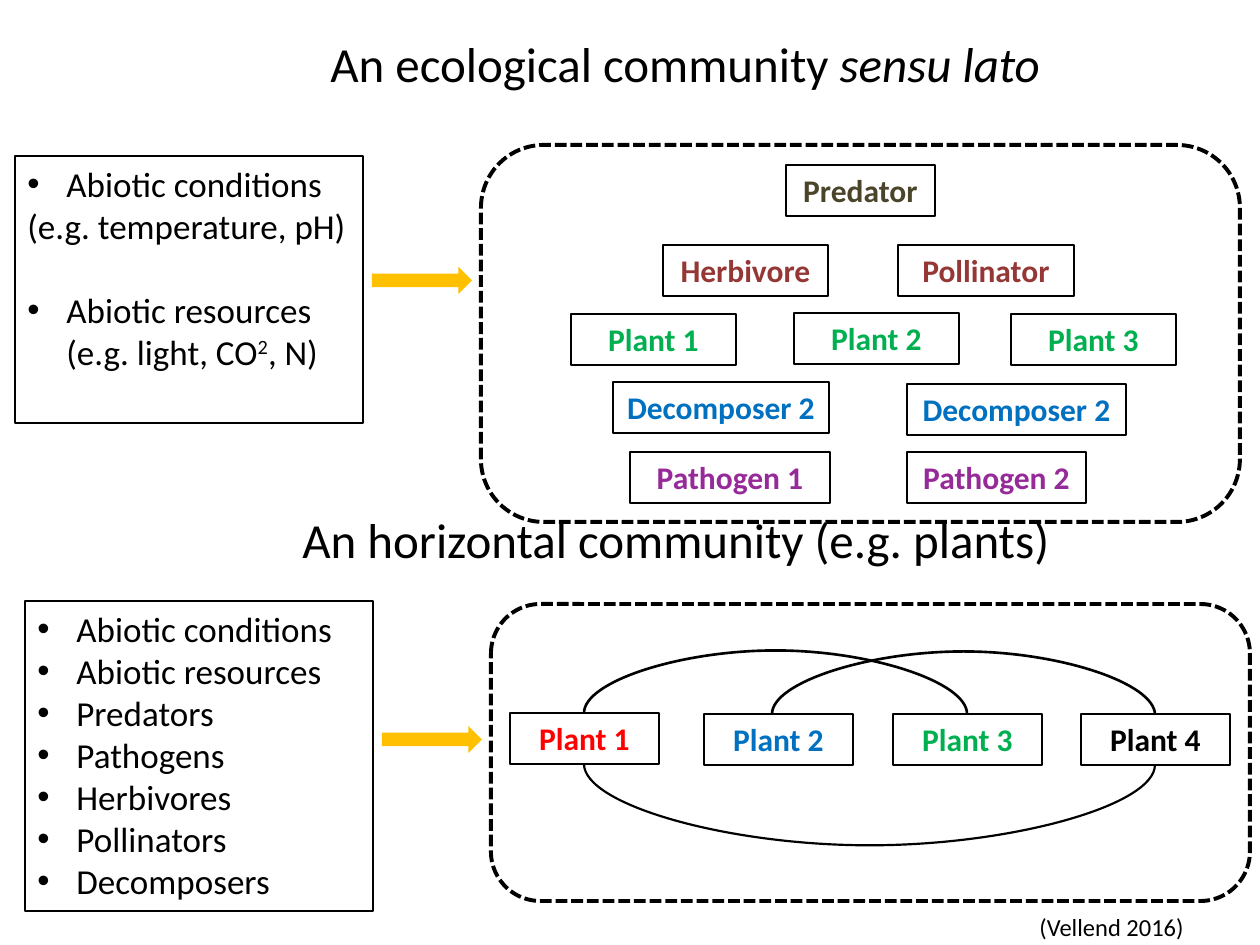
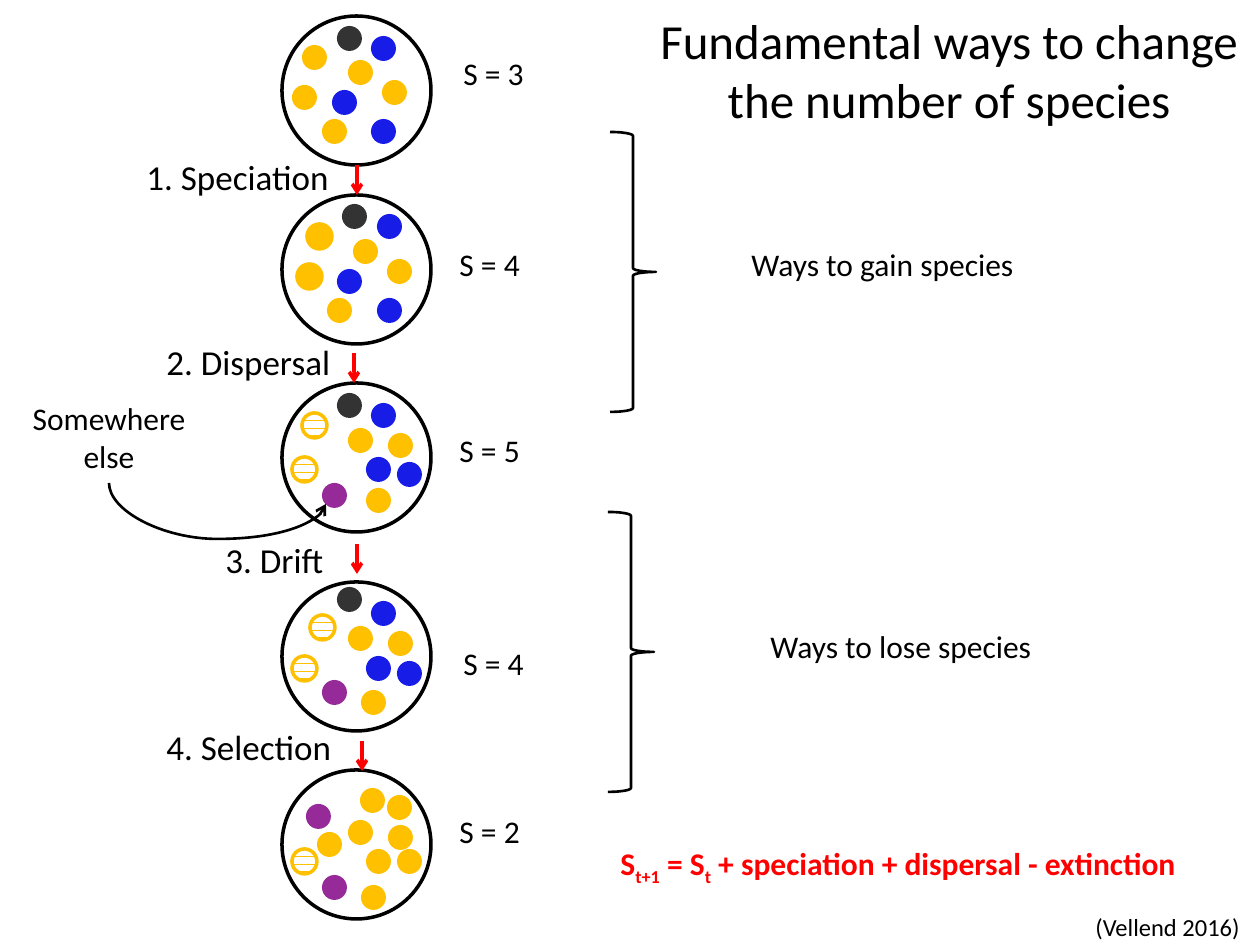
from lxml import etree
from pptx import Presentation
from pptx import util as u
from pptx.dml.color import RGBColor
from pptx.enum import dml, shapes, text
from pptx.oxml.ns import qn

PX = 7257  # EMU in one px, 126 px to the inch
FONT = "Calibri"
TITLE, BODY, LABEL, SOURCE = 28, 20, 18, 14
BLACK = RGBColor(0x00, 0x00, 0x00)
WHITE = RGBColor(0xFF, 0xFF, 0xFF)
DARK = RGBColor(0x33, 0x33, 0x33)
OLIVE = RGBColor(0x4A, 0x45, 0x2A)
BROWN = RGBColor(0x95, 0x37, 0x35)
GREEN = RGBColor(0x00, 0xB0, 0x50)
SKY = RGBColor(0x00, 0x70, 0xC0)
BLUE = RGBColor(0x17, 0x1C, 0xE7)
PURPLE = RGBColor(0x96, 0x2A, 0x99)
RED = RGBColor(0xFF, 0x00, 0x00)
AMBER = RGBColor(0xFF, 0xC0, 0x00)
SHAPE = shapes.MSO_SHAPE
CENTER = text.PP_ALIGN.CENTER


def draw(page, kind, box, fill=None, line=None, weight=0.75):
    """Add a preset shape; box is left, top, width, height in px."""
    shape = page.shapes.add_shape(kind, *[PX * side for side in box])
    shape.shadow.inherit = False
    if fill is None:
        shape.fill.background()
    else:
        shape.fill.solid()
        shape.fill.fore_color.rgb = fill
    if line is None:
        shape.line.fill.background()
    else:
        shape.line.color.rgb = line
        shape.line.width = u.Pt(weight)
    return shape


def write(shape, lines, size, color=BLACK, bold=False, align=text.PP_ALIGN.LEFT, accent=()):
    """Fill a shape with paragraphs; every second part between bars gets the accent.

    A line that starts with a bullet sign becomes a bulleted paragraph.
    """
    frame = shape.text_frame
    frame.word_wrap = True
    frame.vertical_anchor = text.MSO_ANCHOR.TOP
    for number, line in enumerate(lines):
        para = frame.paragraphs[0] if number == 0 else frame.add_paragraph()
        para.alignment = align
        if line.startswith("•"):
            props = para._p.get_or_add_pPr()
            props.set("marL", str(39 * PX))
            props.set("indent", str(-39 * PX))
            etree.SubElement(props, qn("a:buFont")).set("typeface", "Arial")
            etree.SubElement(props, qn("a:buChar")).set("char", "•")
        for order, part in enumerate(line.lstrip("•").split("|")):
            span = para.add_run()
            span.text = part
            span.font.name = FONT
            span.font.size = u.Pt(size)
            span.font.bold = bold
            span.font.color.rgb = color
            if order % 2:
                span._r.get_or_add_rPr().set(*accent)
    return shape


deck = Presentation()
deck.slide_width, deck.slide_height = u.Inches(10), u.Inches(7.5)
blank = deck.slide_layouts[6]
community = deck.slides.add_slide(blank)
change = deck.slides.add_slide(blank)

# Slide 1: factors on the left act on the community on the right
for frame_box, arrow_box, factor_box in [
    ((481, 145, 759, 377), (372, 267, 100, 27), (15, 156, 348, 267)),
    ((491, 604, 759, 297), (382, 726, 100, 27), (25, 601, 348, 310)),
]:
    border = draw(community, SHAPE.ROUNDED_RECTANGLE, frame_box, line=BLACK, weight=2.25)
    border.line.dash_style = dml.MSO_LINE.SQUARE_DOT
    draw(community, SHAPE.RIGHT_ARROW, arrow_box, fill=AMBER)
    factors = draw(community, SHAPE.RECTANGLE, factor_box, line=BLACK)
    if frame_box[1] < 500:
        write(factors, ["•Abiotic conditions", "(e.g. temperature, pH)",
                        "•Abiotic resources (e.g. light, CO|2|, N)"],
              BODY, accent=("baseline", "30000"))
        factors.text_frame.paragraphs[2].space_before = u.Pt(24)
    else:
        write(factors, ["•Abiotic conditions", "•Abiotic resources", "•Predators", "•Pathogens",
                        "•Herbivores", "•Pollinators", "•Decomposers"], BODY)

for name, color, left, top, width in [
    ("Predator", OLIVE, 786, 165, 149),
    ("Herbivore", BROWN, 663, 245, 165),
    ("Pollinator", BROWN, 898, 245, 176),
    ("Plant 1", GREEN, 571, 314, 165),
    ("Plant 2", GREEN, 794, 313, 165),
    ("Plant 3", GREEN, 1011, 314, 165),
    ("Decomposer 2", SKY, 613, 382, 216),
    ("Decomposer 2", SKY, 907, 384, 219),
    ("Pathogen 1", PURPLE, 630, 452, 200),
    ("Pathogen 2", PURPLE, 907, 452, 179),
]:
    group = draw(community, SHAPE.RECTANGLE, (left, top, width, 51), line=BLACK)
    write(group, [name], LABEL, color, True, CENTER)

plants = []
for number, (color, left, top) in enumerate(
        [(RED, 510, 713), (SKY, 704, 714), (GREEN, 893, 714), (BLACK, 1081, 714)], 1):
    plant = draw(community, SHAPE.RECTANGLE, (left, top, 149, 51), line=BLACK)
    plants.append(write(plant, [f"Plant {number}"], LABEL, color, True, CENTER))

# Slide 2: a chain of communities, each a ring holding coloured individuals
HATCHED = "hatched"
OUTLINED = "outlined"
rings = [
    (16, {DARK: [(55, 10)], BLUE: [(89, 20), (50, 74), (89, 103)],
          AMBER: [(20, 29), (66, 44), (10, 69), (100, 64), (40, 103)]}),
    (195, {DARK: [(60, 9)], BLUE: [(95, 19), (55, 74), (95, 103)],
           AMBER: [(71, 44), (105, 64), (45, 103)], OUTLINED: [(25, 29), (15, 69)]}),
    (383, {DARK: [(55, 10)], BLUE: [(89, 20), (84, 74), (115, 79)],
           AMBER: [(66, 45), (106, 50), (84, 105)], HATCHED: [(20, 30), (10, 74)],
           PURPLE: [(40, 100)]}),
    (582, {DARK: [(55, 5)], BLUE: [(89, 19), (84, 74), (115, 79)],
           AMBER: [(66, 44), (106, 49), (79, 108)], HATCHED: [(28, 33), (10, 74)],
           PURPLE: [(40, 98)]}),
    (770, {AMBER: [(66, 50), (106, 55), (79, 115), (84, 79), (115, 79), (78, 18), (105, 25),
                   (35, 62)], HATCHED: [(10, 79)], PURPLE: [(40, 105), (24, 34)]}),
]
RING_LEFT = 282
for ring_top, species in rings:
    draw(change, SHAPE.OVAL, (RING_LEFT, ring_top, 149, 149), line=BLACK, weight=2)
    for look, places in species.items():
        edged = look in (HATCHED, OUTLINED)
        for x, y in places:
            dot = draw(change, SHAPE.OVAL, (RING_LEFT + x, ring_top + y, 25, 25),
                       AMBER if edged else look, AMBER if edged else None, 2)
            if look == HATCHED:
                dot.fill.patterned()
                dot.fill.pattern = dml.MSO_PATTERN.DASHED_HORIZONTAL
                dot.fill.fore_color.rgb = AMBER
                dot.fill.back_color.rgb = WHITE
            if look == PURPLE and ring_top == 383:
                immigrant = dot

for left, top in [(610, 132), (608, 512)]:
    draw(change, SHAPE.RIGHT_BRACE, (left, top, 46, 280), line=BLACK, weight=1.5)

# Free-standing text of both slides
LEFT = text.PP_ALIGN.LEFT
for page, words, size, align, box in [
    (community, "An ecological community |sensu lato", TITLE, LEFT, (318, 27, 828, 72)),
    (community, "An horizontal community (e.g. plants)", TITLE, LEFT, (290, 503, 828, 72)),
    (community, "(Vellend 2016)", SOURCE, LEFT, (1027, 906, 218, 42)),
    (change, "Fundamental ways to change the number of species", TITLE, CENTER, (643, 4, 612, 131)),
    (change, "1. Speciation", BODY, LEFT, (134, 149, 223, 55)),
    (change, "2. Dispersal", BODY, LEFT, (154, 334, 208, 55)),
    (change, "3. Drift", BODY, LEFT, (213, 532, 208, 55)),
    (change, "4. Selection", BODY, LEFT, (154, 719, 208, 55)),
    (change, "S = 3", LABEL, LEFT, (451, 48, 208, 50)),
    (change, "S = 4", LABEL, LEFT, (447, 239, 208, 50)),
    (change, "S = 5", LABEL, LEFT, (447, 425, 208, 50)),
    (change, "S = 4", LABEL, LEFT, (451, 638, 208, 50)),
    (change, "S = 2", LABEL, LEFT, (447, 806, 208, 50)),
    (change, "Ways to gain species", LABEL, LEFT, (739, 239, 307, 50)),
    (change, "Ways to lose species", LABEL, LEFT, (758, 621, 307, 50)),
    (change, "(Vellend 2016)", SOURCE, LEFT, (1083, 906, 172, 42)),
]:
    label = page.shapes.add_textbox(*[PX * side for side in box])
    write(label, [words], size, align=align, accent=("i", "1"))

formula = change.shapes.add_textbox(608 * PX, 838 * PX, 600 * PX, 50 * PX)
write(formula, ["S|t+1| = S|t| + speciation + dispersal - extinction"], LABEL, RED, True,
      accent=("baseline", "-25000"))
elsewhere = change.shapes.add_textbox(5 * PX, 393 * PX, 208 * PX, 90 * PX)
write(elsewhere, ["Somewhere else"], LABEL, align=CENTER)

# Connectors: straight arrows between rings, then curves that bulge by a depth in px
connectors = []
for x, y in [(357, 165), (354, 353), (357, 544), (362, 741)]:
    arrow = change.shapes.add_connector(
        shapes.MSO_CONNECTOR.STRAIGHT, x * PX, y * PX, x * PX, (y + 30) * PX)
    connectors.append((arrow, RED, 2, True))

for page, start, start_site, end, end_site, ends, depth, weight in [
    (community, plants[0], 2, plants[3], 2, (584, 764, 1155, 765), 82, 1.25),
    (community, plants[0], 0, plants[2], 0, (584, 713, 967, 714), -63, 1.5),
    (community, plants[1], 0, plants[3], 0, (772, 714, 1155, 715), -63, 1.5),
    (change, elsewhere, 2, immigrant, 3, (109, 483, 326, 504), 56, 1.5),
]:
    x1, y1, x2, y2 = ends
    curve = page.shapes.add_connector(shapes.MSO_CONNECTOR.CURVE, *[PX * side for side in ends])
    curve.begin_connect(start, start_site)
    curve.end_connect(end, end_site)
    # A quarter turn makes the curve leave its start vertically
    curve.width, curve.height = (y2 - y1) * PX, (x2 - x1) * PX
    curve.left = (x1 + x2) * PX // 2 - curve.width // 2
    curve.top = (y1 + y2) * PX // 2 - curve.height // 2
    turn = curve._element.spPr.find(qn("a:xfrm"))
    turn.attrib.pop("flipV", None)
    turn.set("rot", "16200000")
    turn.set("flipH", "1")
    guides = curve._element.spPr.find(qn("a:prstGeom")).get_or_add_avLst()
    guide = etree.SubElement(guides, qn("a:gd"))
    guide.set("name", "adj1")
    guide.set("fmla", f"val {round(100000 * depth / (y2 - y1))}")
    connectors.append((curve, BLACK, weight, page is change))

for connector, color, weight, pointed in connectors:
    connector.line.color.rgb = color
    connector.line.width = u.Pt(weight)
    if pointed:
        etree.SubElement(connector.line._get_or_add_ln(), qn("a:tailEnd")).set("type", "arrow")
    etree.SubElement(connector._element.spPr, qn("a:effectLst"))

deck.save("out.pptx")
